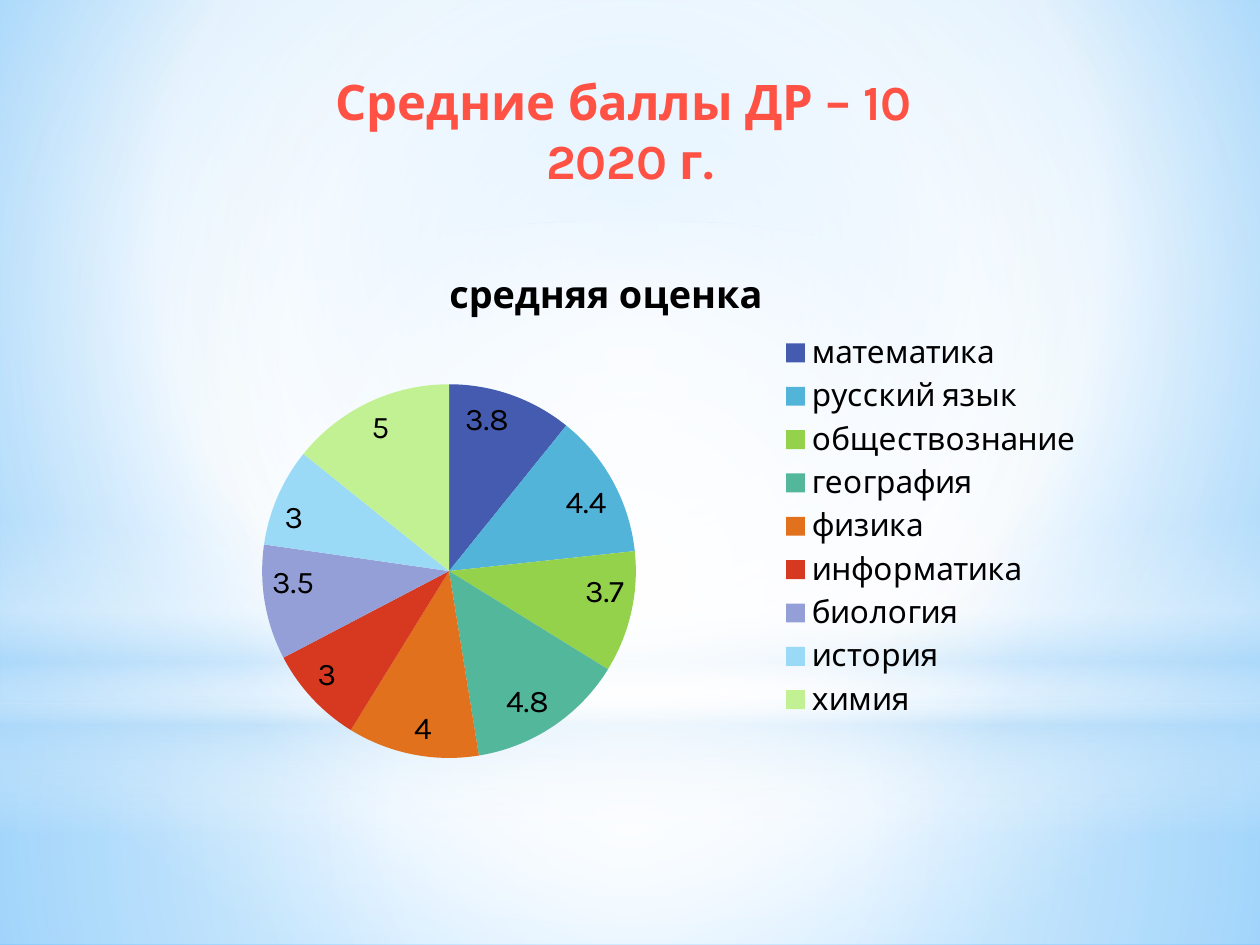
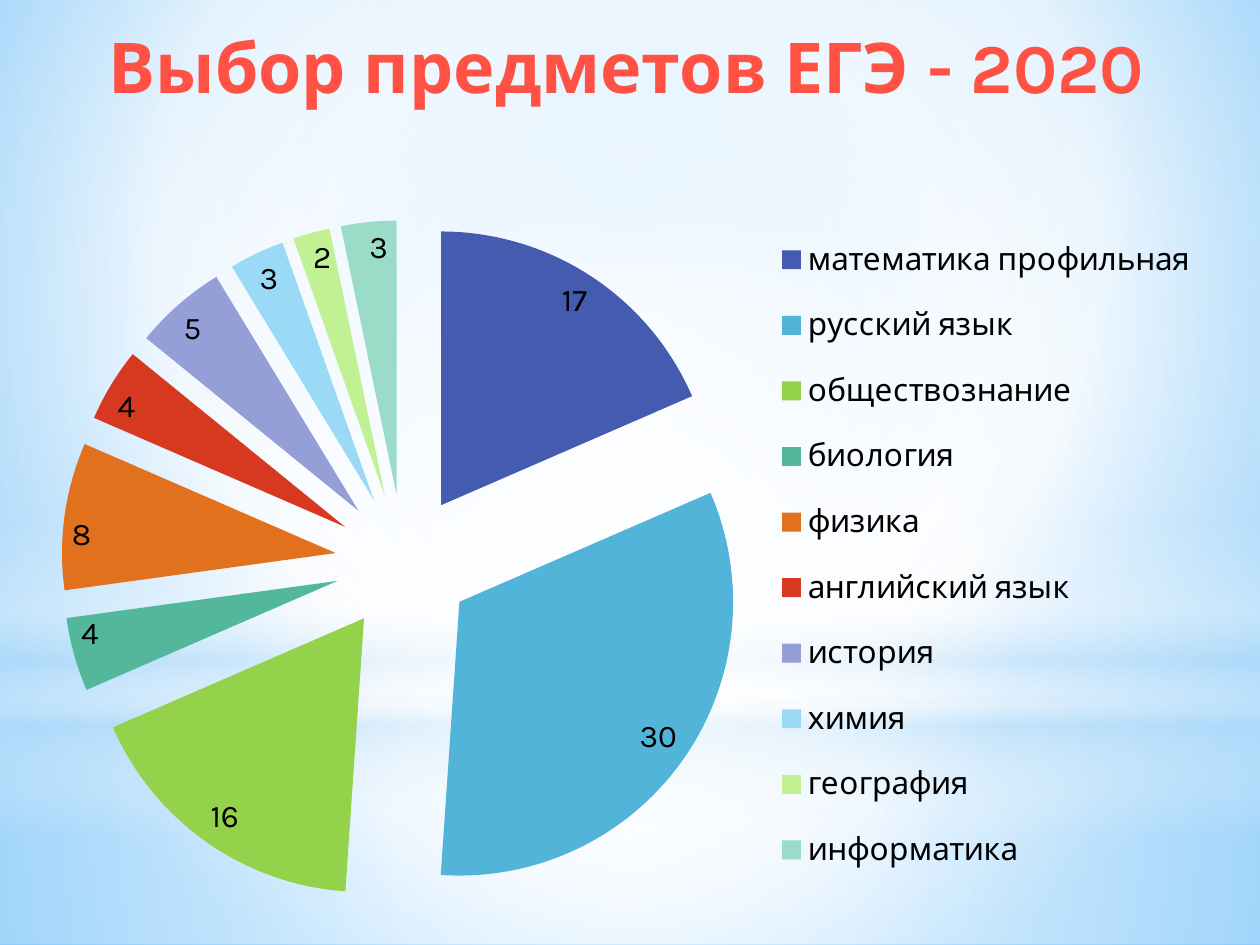
from pptx import Presentation
from pptx.chart.data import CategoryChartData
from pptx.dml.color import RGBColor
from pptx.enum.chart import XL_CHART_TYPE, XL_LABEL_POSITION, XL_LEGEND_POSITION
from pptx.enum.shapes import MSO_SHAPE
from pptx.enum.text import PP_ALIGN
from pptx.oxml import parse_xml
from pptx.oxml.ns import nsdecls, qn
from pptx.util import Pt

WIDTH, HEIGHT = 720, 540
FONT = "Karla"
TITLE_COLOUR = "FF5244"
TEXT_COLOUR = "000000"
WHITE, PALE = "FFFFFF", "B4DCFA"
SLICES = ["455BB0", "53B4D9", "95D24B", "53B79B", "E2711D",
          "D63820", "949FD7", "9BDAF7", "C2F194", "9ADCC8"]

CENTRE = (50, 50, 50, 50)
BACKDROP = [(0, "9ED5FF", 100), (60, WHITE, 100), (100, "5BB9FF", 100)]

# Glow layers behind every slide: shape, box, gradient stops, focus
GLOWS = [
    (MSO_SHAPE.RECTANGLE, (0, 402, WIDTH, 138),
     [(0, WHITE, 91), (37, WHITE, 76), (100, PALE, 79)], CENTRE),
    (MSO_SHAPE.RECTANGLE, (0, 0, WIDTH, 402),
     [(0, WHITE, 89), (48, WHITE, 62), (100, PALE, 79)], CENTRE),
    (MSO_SHAPE.RECTANGLE, (0, 297, WIDTH, 180),
     [(0, WHITE, 0), (29, WHITE, 30), (45, PALE, 40),
      (55, WHITE, 26), (65, PALE, 60), (100, WHITE, 0)], None),
    (MSO_SHAPE.OVAL, (0, 126, WIDTH, 402),
     [(0, WHITE, 100), (56, WHITE, 0)], CENTRE),
]


def colour(hex_string):
    return RGBColor.from_string(hex_string)


def paint_gradient(fill, owner, stops, focus):
    """Radial gradient around the focus, or a vertical one without it."""
    fill.gradient()
    stop_xml = "".join(
        f'<a:gs pos="{pos * 1000}"><a:srgbClr val="{tint}">'
        f'<a:alpha val="{alpha * 1000}"/></a:srgbClr></a:gs>'
        for pos, tint, alpha in stops)
    if focus:
        left, top, right, bottom = (side * 1000 for side in focus)
        direction = (f'<a:path path="circle"><a:fillToRect l="{left}" t="{top}" '
                     f'r="{right}" b="{bottom}"/></a:path>')
    else:
        direction = '<a:lin ang="5400000" scaled="0"/>'
    default = owner.find(".//" + qn("a:gradFill"))
    default.getparent().replace(default, parse_xml(
        f'<a:gradFill {nsdecls("a")} rotWithShape="1">'
        f'<a:gsLst>{stop_xml}</a:gsLst>{direction}</a:gradFill>'))


def manual_layout(box, target=""):
    """Chart layout with the box given as fractions of the chart."""
    x, y, w, h = box
    return parse_xml(
        f'<c:layout {nsdecls("c")}><c:manualLayout>{target}'
        f'<c:xMode val="edge"/><c:yMode val="edge"/><c:x val="{x}"/>'
        f'<c:y val="{y}"/><c:w val="{w}"/><c:h val="{h}"/>'
        f'</c:manualLayout></c:layout>')


class Deck:
    def __init__(self):
        self.prs = Presentation()
        self.prs.slide_width, self.prs.slide_height = Pt(WIDTH), Pt(HEIGHT)
        master = self.prs.slide_master
        paint_gradient(master.background.fill, master.element,
                       BACKDROP, (20, 10, 20, 60))
        self.slide = None

    def new_slide(self):
        self.slide = self.prs.slides.add_slide(self.prs.slide_layouts[6])
        for kind, box, stops, focus in GLOWS:
            self.glow(kind, box, stops, focus)

    def glow(self, kind, box, stops, focus):
        layer = self.slide.shapes.add_shape(kind, *map(Pt, box))
        layer.shadow.inherit = False
        layer.line.fill.background()
        paint_gradient(layer.fill, layer.element, stops, focus)

    def title(self, box, lines, size):
        frame = self.slide.shapes.add_textbox(*map(Pt, box)).text_frame
        frame.word_wrap = True
        frame.text = "\n".join(lines)
        for paragraph in frame.paragraphs:
            paragraph.alignment = PP_ALIGN.CENTER
            self.style(paragraph.runs[0].font, size, TITLE_COLOUR, True)

    def style(self, font, size, tint=TEXT_COLOUR, bold=False):
        font.name, font.size, font.bold = FONT, Pt(size), bold
        font.color.rgb = colour(tint)

    def pie(self, box, name, scores, pie_box, legend_box,
            heading=False, explosion=0):
        data = CategoryChartData()
        data.categories = list(scores)
        data.add_series(name, list(scores.values()))
        chart = self.slide.shapes.add_chart(
            XL_CHART_TYPE.PIE, *map(Pt, box), data).chart
        self.style(chart.font, 18)

        # Heading
        chart.has_title = heading
        if heading:
            chart.chart_title.text_frame.text = name
            run = chart.chart_title.text_frame.paragraphs[0].runs[0]
            self.style(run.font, 21.6, bold=True)
            chart.chart_title.include_in_layout = False

        # Legend
        chart.has_legend = True
        chart.legend.position = XL_LEGEND_POSITION.RIGHT
        chart.legend.include_in_layout = False
        self.style(chart.legend.font, 18)

        # Slices and their values
        plot = chart.plots[0]
        plot.vary_by_categories = True
        plot.has_data_labels = True
        labels = plot.data_labels
        labels.show_value = True
        labels.show_percentage = False
        labels.position = XL_LABEL_POSITION.INSIDE_END
        self.style(labels.font, 18)
        series = plot.series[0]
        for index, tint in enumerate(SLICES[:len(scores)]):
            slice_fill = series.points[index].format.fill
            slice_fill.solid()
            slice_fill.fore_color.rgb = colour(tint)
        space = plot._element.getroottree().getroot()
        if explosion:
            space.find(".//" + qn("c:dPt")).addprevious(parse_xml(
                f'<c:explosion {nsdecls("c")} val="{explosion}"/>'))

        # Places of pie and legend
        plot_area = space.find(".//" + qn("c:plotArea"))
        legend = space.find(".//" + qn("c:legend"))
        for part in (plot_area, legend):
            for automatic in part.findall(qn("c:layout")):
                part.remove(automatic)
        plot_area.insert(0, manual_layout(
            pie_box, '<c:layoutTarget val="inner"/>'))
        legend.find(qn("c:legendPos")).addnext(manual_layout(legend_box))


def main():
    deck = Deck()

    # Average scores
    deck.new_slide()
    deck.title((48, 37.5, 624, 75), ["Средние баллы ДР – 10 ", "2020 г."], 28)
    averages = {"математика": 3.8, "русский язык": 4.4, "обществознание": 3.7,
                "география": 4.8, "физика": 4, "информатика": 3,
                "биология": 3.5, "история": 3, "химия": 5}
    deck.pie((65.5, 139.5, 562, 319.5), "средняя оценка", averages,
             pie_box=(0.15, 0.25, 0.38, 0.67),
             legend_box=(0.67, 0.15, 0.32, 0.71), heading=True)

    # Chosen exam subjects
    deck.new_slide()
    deck.title((-14.5, 10, 745, 55.5), ["Выбор предметов ЕГЭ - 2020"], 40)
    choices = {"математика профильная": 17, "русский язык": 30,
               "обществознание": 16, "биология": 4, "физика": 8,
               "английский язык": 4, "история": 5, "химия": 3,
               "география": 2, "информатика": 3}
    deck.pie((14.5, 100, 686, 430), "Series 1", choices,
             pie_box=(0.03, 0.06, 0.57, 0.91),
             legend_box=(0.62, 0.05, 0.36, 0.91), explosion=25)

    deck.prs.save("out.pptx")


if __name__ == "__main__":
    main()
